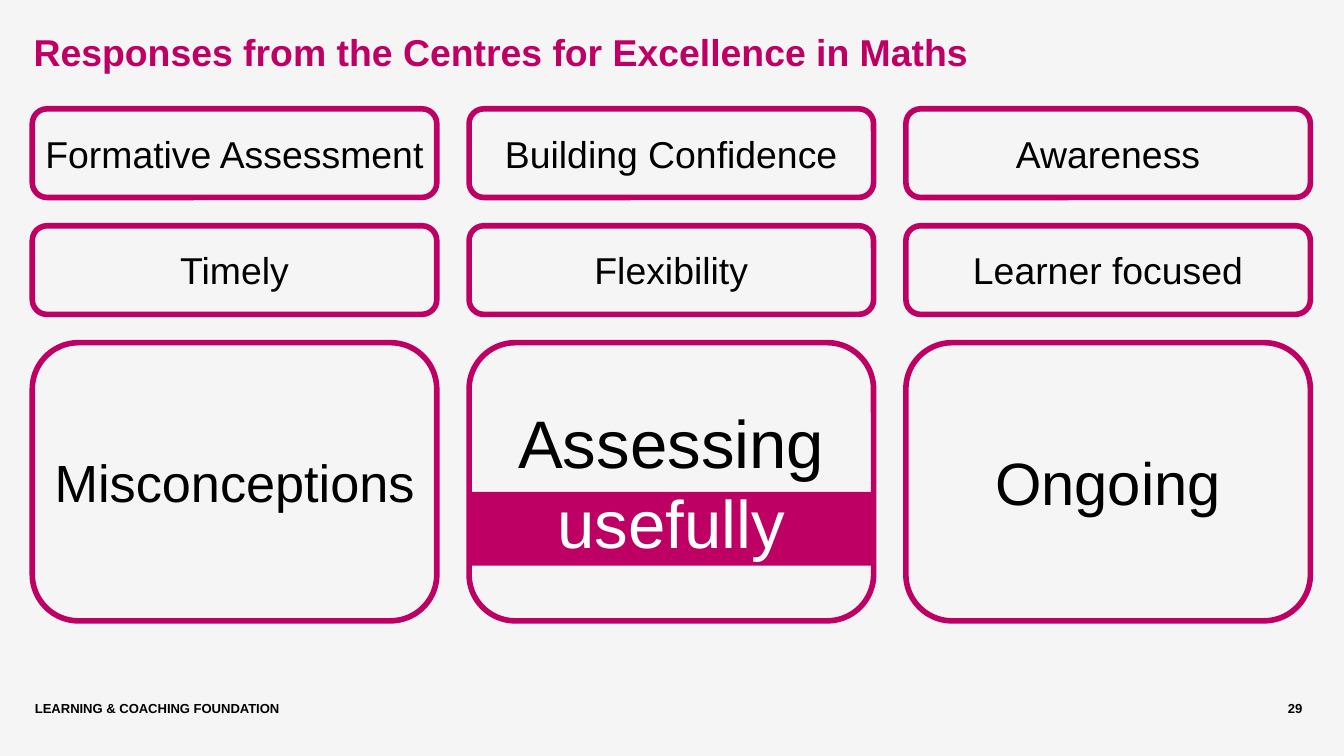
"""Build the slide of nine responses from the maths centres."""
import pptx
import pptx.dml.color
import pptx.enum.shapes
import pptx.enum.text
import pptx.util

Inches = pptx.util.Inches
Align = pptx.enum.text.PP_ALIGN
Anchor = pptx.enum.text.MSO_ANCHOR
Shape = pptx.enum.shapes.MSO_SHAPE
MAGENTA, BLACK, WHITE, GREY = "BE0064", "000000", "FFFFFF", "F5F5F5"


def color(hex_string):
    return pptx.dml.color.RGBColor.from_string(hex_string)


def write(shape, text, size, ink, align, anchor, bold=False, margins=(0, 0)):
    frame = shape.text_frame
    frame.word_wrap = True
    frame.vertical_anchor = anchor
    frame.margin_left = frame.margin_right = Inches(margins[0])
    frame.margin_top = frame.margin_bottom = Inches(margins[1])
    paragraph = frame.paragraphs[0]
    paragraph.alignment = align
    run = paragraph.add_run()
    run.text = text
    run.font.name = "Arial"
    run.font.size = pptx.util.Pt(size)
    run.font.bold = bold
    run.font.color.rgb = color(ink)
    return paragraph


presentation = pptx.Presentation()
presentation.slide_width = Inches(10)
presentation.slide_height = Inches(10 * 9 / 16)
slide = presentation.slides.add_slide(presentation.slide_layouts[6])
slide.background.fill.solid()
slide.background.fill.fore_color.rgb = color(GREY)

title = slide.shapes.add_textbox(Inches(0.25), Inches(0.27), Inches(9.23), Inches(0.76))
heading = write(title, "Responses from the Centres for Excellence in Maths",
                20, MAGENTA, Align.LEFT, Anchor.TOP, bold=True)
heading.line_spacing = pptx.util.Pt(20)

for text, left, width, align in [
    ("LEARNING & COACHING FOUNDATION", 0.26, 8.41, Align.LEFT),
    ("29", 8.7, 0.99, Align.RIGHT),
]:
    footer = slide.shapes.add_textbox(Inches(left), Inches(5.21), Inches(width), Inches(0.3))
    write(footer, text, 7, BLACK, align, Anchor.TOP, bold=True)

grid_left, grid_top = 0.24, 0.81
column_pitch, row_pitch, box_width = 3.25, 0.87, 3.01
rows = [
    (0.66, [("Formative Assessment", 20), ("Building Confidence", 20), ("Awareness", 20)]),
    (0.66, [("Timely", 20), ("Flexibility", 20), ("Learner focused", 20)]),
    (2.07, [("Misconceptions", 28), ("Assessing usefully", 36), ("Ongoing", 32)]),
]
for row, (height, responses) in enumerate(rows):
    for column, (text, size) in enumerate(responses):
        box = slide.shapes.add_shape(
            Shape.ROUNDED_RECTANGLE,
            Inches(grid_left + column * column_pitch), Inches(grid_top + row * row_pitch),
            Inches(box_width), Inches(height))
        box.shadow.inherit = False
        box.fill.background()
        box.line.color.rgb = color(MAGENTA)
        box.line.width = pptx.util.Pt(3)
        side_margin = 0 if text in ("Formative Assessment", "Misconceptions") else 0.1
        write(box, text, size, BLACK, Align.CENTER, Anchor.MIDDLE, margins=(side_margin, 0.05))

highlight = slide.shapes.add_group_shape()
band = highlight.shapes.add_shape(
    Shape.RECTANGLE, Inches(grid_left + column_pitch), Inches(3.66),
    Inches(box_width), Inches(0.55))
band.fill.solid()
band.fill.fore_color.rgb = color(MAGENTA)
label = highlight.shapes.add_shape(
    Shape.ROUNDED_RECTANGLE, Inches(3.93), Inches(3.52), Inches(2.13), Inches(0.72))
label.fill.background()
write(label, "usefully", 36, WHITE, Align.CENTER, Anchor.MIDDLE, margins=(0.1, 0.05))
for shape in (band, label):
    shape.shadow.inherit = False
    shape.line.fill.background()

presentation.save("out.pptx")
